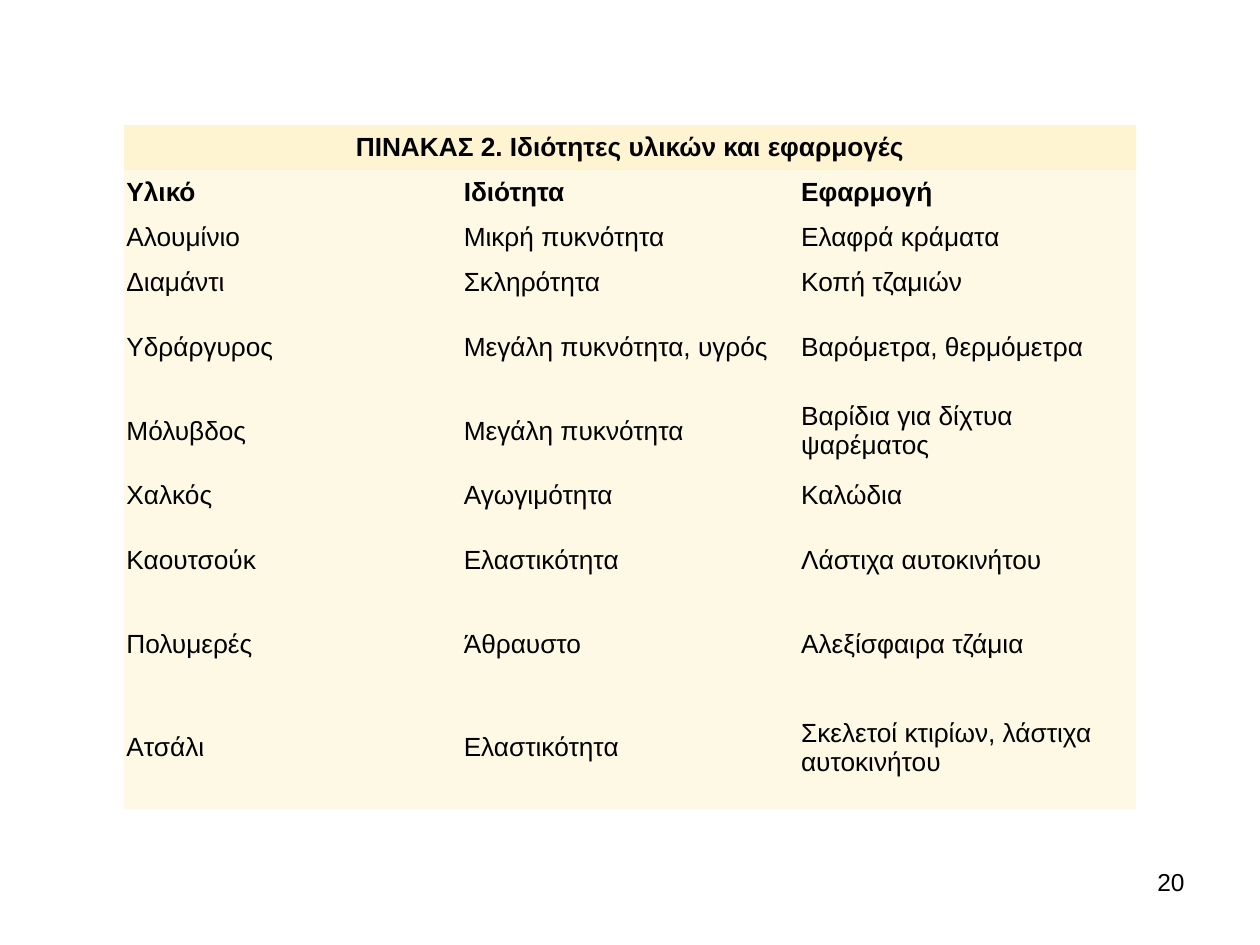
import dataclasses
import pptx
import pptx.dml.color
import pptx.enum.text
import pptx.util


@dataclasses.dataclass(frozen=True)
class Theme:
    font: str = "Arial"
    ink: str = "000000"
    caption_fill: str = "FEF4D2"
    body_fill: str = "FEF9E5"
    table_size: int = 15
    number_size: int = 14
    cell_margin: float = 0.02
    plain_table: str = "{2D5ABB26-0587-4C30-8999-92F81FD0307C}"


@dataclasses.dataclass(frozen=True)
class Box:
    left: int
    top: int
    width: int
    height: int


THEME = Theme()
SLIDE_WIDTH = pptx.util.Inches(10)
SLIDE_HEIGHT = pptx.util.Inches(7.5)
ALIGN = pptx.enum.text.PP_ALIGN

CAPTION = "ΠΙΝΑΚΑΣ 2. Ιδιότητες υλικών και εφαρμογές"
HEADINGS = ("Υλικό", "Ιδιότητα", "Εφαρμογή")
SINGLE, DOUBLE, TRIPLE = 0.36, 0.67, 0.98
MATERIALS = [
    (SINGLE, "Αλουμίνιο", "Μικρή πυκνότητα", "Ελαφρά κράματα"),
    (SINGLE, "Διαμάντι", "Σκληρότητα", "Κοπή τζαμιών"),
    (DOUBLE, "Υδράργυρος", "Μεγάλη πυκνότητα, υγρός", "Βαρόμετρα, θερμόμετρα"),
    (DOUBLE, "Μόλυβδος", "Μεγάλη πυκνότητα", "Βαρίδια για δίχτυα ψαρέματος"),
    (SINGLE, "Χαλκός", "Αγωγιμότητα", "Καλώδια"),
    (DOUBLE, "Καουτσούκ", "Ελαστικότητα", "Λάστιχα αυτοκινήτου"),
    (DOUBLE, "Πολυμερές", "Άθραυστο", "Αλεξίσφαιρα τζάμια"),
    (TRIPLE, "Ατσάλι", "Ελαστικότητα", "Σκελετοί κτιρίων, λάστιχα αυτοκινήτου"),
]


def share_box(left, top, width, height):
    return Box(
        int(SLIDE_WIDTH * left / 100),
        int(SLIDE_HEIGHT * top / 100),
        int(SLIDE_WIDTH * width / 100),
        int(SLIDE_HEIGHT * height / 100),
    )


def write(frame, text, size, align, bold=False):
    frame.text = text
    paragraph = frame.paragraphs[0]
    paragraph.alignment = align
    font = paragraph.runs[0].font
    font.name = THEME.font
    font.size = pptx.util.Pt(size)
    font.bold = bold
    font.color.rgb = pptx.dml.color.RGBColor.from_string(THEME.ink)


def fill_cell(cell, text, fill, align=ALIGN.LEFT, bold=False):
    margin = pptx.util.Inches(THEME.cell_margin)
    cell.margin_left = cell.margin_right = margin
    cell.margin_top = cell.margin_bottom = margin
    cell.vertical_anchor = pptx.enum.text.MSO_ANCHOR.MIDDLE
    cell.fill.solid()
    cell.fill.fore_color.rgb = pptx.dml.color.RGBColor.from_string(fill)
    write(cell.text_frame, text, THEME.table_size, align, bold)


def place_materials_table(slide, box):
    body = [(SINGLE, *HEADINGS)] + MATERIALS
    weights = [SINGLE] + [weight for weight, *_ in body]
    frame = slide.shapes.add_table(
        len(weights), len(HEADINGS), box.left, box.top, box.width, box.height
    )
    table = frame.table
    table.first_row = table.horz_banding = False
    table._tbl.tblPr.find(pptx.oxml.ns.qn("a:tableStyleId")).text = THEME.plain_table
    for column in table.columns:
        column.width = box.width // len(HEADINGS)
    for row, weight in zip(table.rows, weights):
        row.height = int(box.height * weight / sum(weights))

    caption = table.cell(0, 0)
    caption.merge(table.cell(0, len(HEADINGS) - 1))
    fill_cell(caption, CAPTION, THEME.caption_fill, ALIGN.CENTER, bold=True)
    for row_index, (_, *texts) in enumerate(body, start=1):
        for column_index, text in enumerate(texts):
            fill_cell(
                table.cell(row_index, column_index),
                text,
                THEME.body_fill,
                bold=row_index == 1,
            )


def place_page_number(slide, box, number):
    page_number = slide.shapes.add_textbox(box.left, box.top, box.width, box.height)
    page_number.text_frame.word_wrap = True
    write(page_number.text_frame, number, THEME.number_size, ALIGN.RIGHT)


def main():
    presentation = pptx.Presentation()
    presentation.slide_width = SLIDE_WIDTH
    presentation.slide_height = SLIDE_HEIGHT
    slide = presentation.slides.add_slide(presentation.slide_layouts[6])
    place_materials_table(slide, share_box(9.84, 13.23, 80.32, 72.4))
    place_page_number(slide, share_box(71.7, 91.07, 23.3, 6.93), "20")
    presentation.save("out.pptx")


if __name__ == "__main__":
    main()
